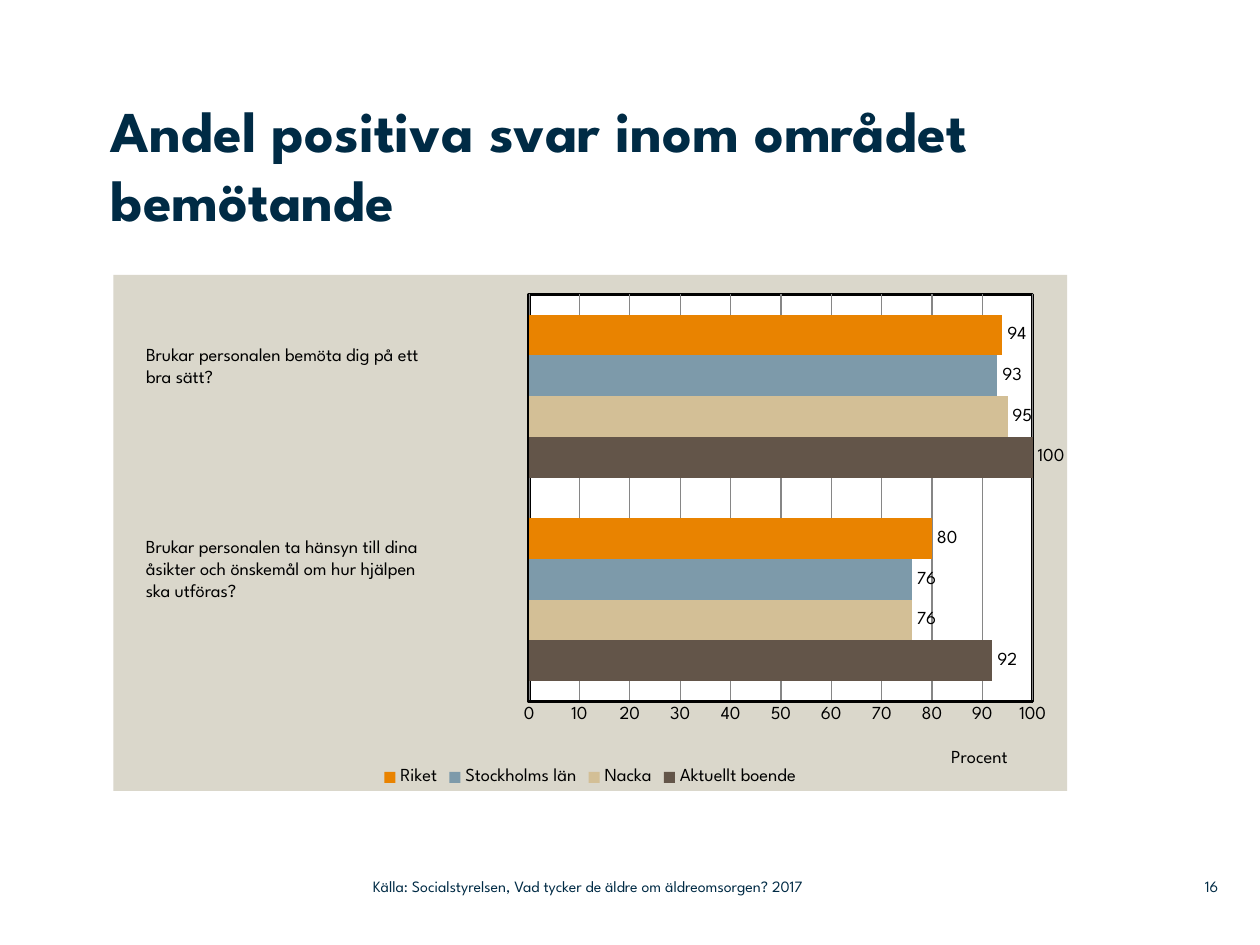
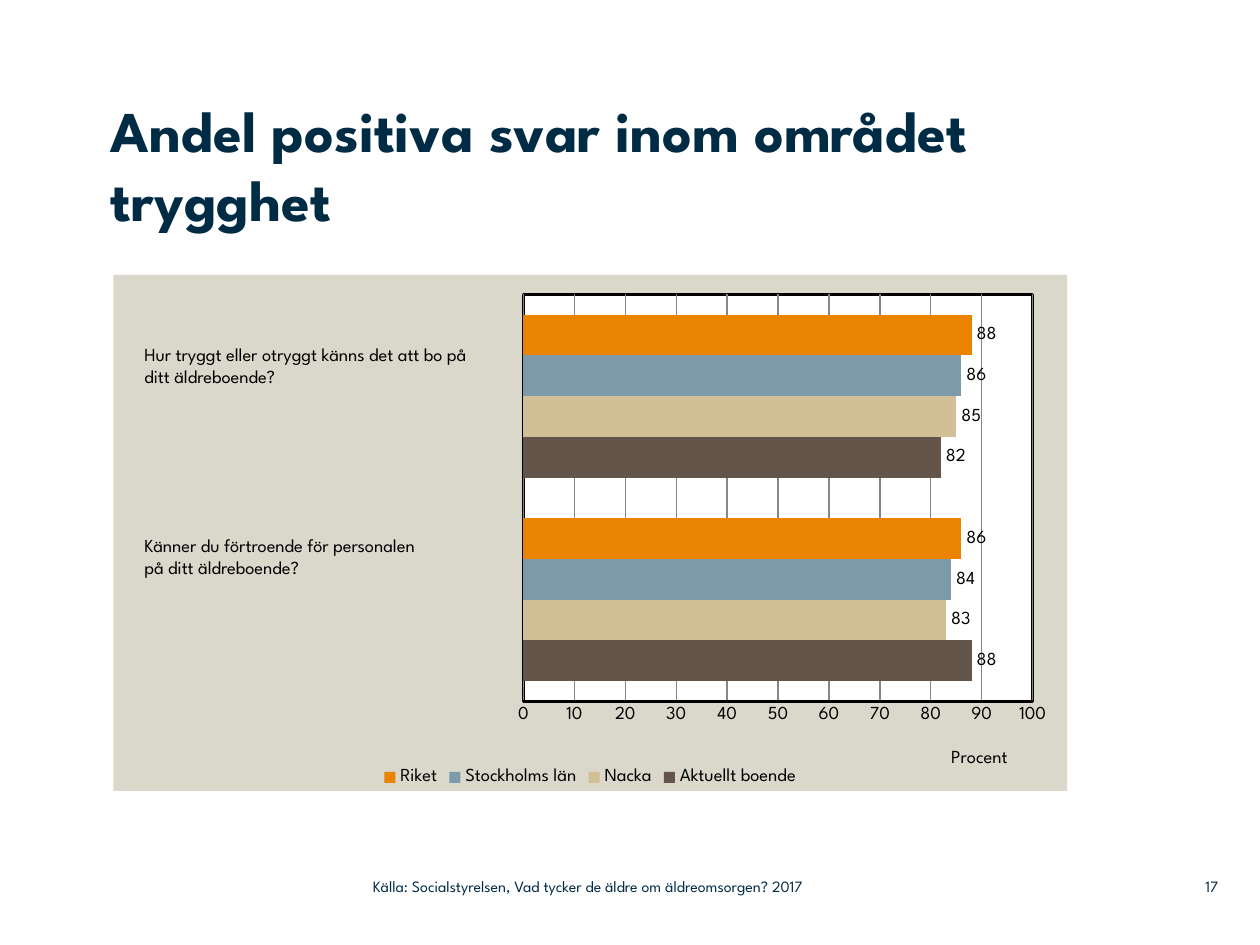
from dataclasses import dataclass

from pptx import Presentation
from pptx.chart.data import CategoryChartData
from pptx.dml.color import RGBColor
from pptx.enum.chart import XL_CHART_TYPE, XL_LABEL_POSITION, XL_LEGEND_POSITION, XL_TICK_MARK
from pptx.enum.text import MSO_ANCHOR, MSO_AUTO_SIZE, PP_ALIGN
from pptx.oxml import parse_xml
from pptx.oxml.ns import nsdecls, qn
from pptx.util import Pt

FONT = "League Spartan"
NAVY = RGBColor(0x00, 0x2B, 0x45)
BLACK = RGBColor(0x00, 0x00, 0x00)
WHITE = RGBColor(0xFF, 0xFF, 0xFF)
GRID_GRAY = RGBColor(0x86, 0x86, 0x86)
PANEL_BEIGE = RGBColor(0xDA, 0xD7, 0xCB)
BROWN = RGBColor(0x63, 0x55, 0x49)
SAND = RGBColor(0xD3, 0xBF, 0x96)
BLUE_GRAY = RGBColor(0x7D, 0x9A, 0xAA)
ORANGE = RGBColor(0xE9, 0x83, 0x00)

SERIES_COLORS = {
    "Aktuellt boende": BROWN,
    "Nacka": SAND,
    "Stockholms län": BLUE_GRAY,
    "Riket": ORANGE,
}
SOURCE = "Källa: Socialstyrelsen, Vad tycker de äldre om äldreomsorgen? 2017"
CHART_SIZE = 10.5
FOOTER_SIZE = 9
FOOTER_TOP = 496
FOOTER_HEIGHT = 21


@dataclass(frozen=True)
class Box:
    left: float
    top: float
    width: float
    height: float


@dataclass(frozen=True)
class Question:
    text: str
    box: Box


@dataclass(frozen=True)
class SurveySlide:
    number: int
    title: str
    plot_left: float
    questions: tuple[Question, ...]
    values: tuple[tuple[int, int], ...]


SURVEY_SLIDES = (
    SurveySlide(
        16,
        "Andel positiva svar inom området bemötande",
        0.436,
        (
            Question("Brukar personalen bemöta dig på ett\nbra sätt?", Box(76.4, 192.4, 214, 32.5)),
            Question(
                "Brukar personalen ta hänsyn till dina\nåsikter och önskemål om hur hjälpen\nska utföras?",
                Box(76.3, 302.2, 215, 45),
            ),
        ),
        ((92, 100), (76, 95), (76, 93), (80, 94)),
    ),
    SurveySlide(
        17,
        "Andel positiva svar inom området trygghet",
        0.43,
        (
            Question(
                "Hur tryggt eller otryggt känns det att bo på ditt äldreboende?",
                Box(75.4, 192.6, 212, 32.5),
            ),
            Question(
                "Känner du förtroende för personalen\npå ditt äldreboende?",
                Box(75.4, 301.7, 211, 32.5),
            ),
        ),
        ((88, 82), (83, 85), (84, 86), (86, 88)),
    ),
)


def place(shape, box: Box) -> None:
    shape.left, shape.top = Pt(box.left), Pt(box.top)
    shape.width, shape.height = Pt(box.width), Pt(box.height)


def format_font(font, size: float, color: RGBColor, bold: bool = False) -> None:
    font.name = FONT
    font.size = Pt(size)
    font.bold = bold
    font.color.rgb = color


def write_text(
    shape,
    text: str,
    *,
    size: float,
    color: RGBColor,
    bold: bool = False,
    align: PP_ALIGN = PP_ALIGN.LEFT,
    anchor: MSO_ANCHOR = MSO_ANCHOR.TOP,
    margins: bool = False,
    grow: bool = False,
) -> None:
    frame = shape.text_frame
    frame.text = text
    frame.word_wrap = True
    frame.auto_size = MSO_AUTO_SIZE.SHAPE_TO_FIT_TEXT if grow else MSO_AUTO_SIZE.NONE
    frame.vertical_anchor = anchor
    if not margins:
        frame.margin_left = frame.margin_right = frame.margin_top = frame.margin_bottom = 0
    for paragraph in frame.paragraphs:
        paragraph.alignment = align
        for run in paragraph.runs:
            format_font(run.font, size, color, bold)


def add_text(slide, box: Box, text: str, **text_format) -> None:
    shape = slide.shapes.add_textbox(Pt(box.left), Pt(box.top), Pt(box.width), Pt(box.height))
    write_text(shape, text, **text_format)


def area_format(fill: RGBColor, line: RGBColor | None = None):
    outline = "<a:ln><a:noFill/></a:ln>"
    if line is not None:
        outline = f'<a:ln w="{Pt(2)}"><a:solidFill><a:srgbClr val="{line}"/></a:solidFill></a:ln>'
    return parse_xml(
        f'<c:spPr {nsdecls("c", "a")}><a:solidFill><a:srgbClr val="{fill}"/></a:solidFill>{outline}</c:spPr>'
    )


def set_layout(element, index: int, target: str = "", **fractions: float) -> None:
    for existing in element.findall(qn("c:layout")):
        element.remove(existing)
    target_tag = f'<c:layoutTarget val="{target}"/>' if target else ""
    modes = '<c:xMode val="edge"/><c:yMode val="edge"/>'
    values = "".join(f'<c:{name} val="{value}"/>' for name, value in fractions.items())
    layout = parse_xml(
        f'<c:layout {nsdecls("c")}><c:manualLayout>{target_tag}{modes}{values}</c:manualLayout></c:layout>'
    )
    element.insert(index, layout)


def format_value_axis(axis) -> None:
    axis.minimum_scale = 0
    axis.maximum_scale = 100
    axis.major_unit = 10
    axis.major_tick_mark = axis.minor_tick_mark = XL_TICK_MARK.NONE
    axis.format.line.color.rgb = BLACK
    axis.format.line.width = Pt(2)
    axis.major_gridlines.format.line.color.rgb = GRID_GRAY
    axis.major_gridlines.format.line.width = Pt(0.75)
    format_font(axis.tick_labels.font, CHART_SIZE, BLACK)
    title = axis.axis_title
    title.text_frame.text = "Procent"
    format_font(title.text_frame.paragraphs[0].runs[0].font, CHART_SIZE, BLACK)
    set_layout(title._element, 1, x=0.875, y=0.91)


def add_survey_chart(slide, survey: SurveySlide) -> None:
    data = CategoryChartData()
    data.categories = ["1", "2"]
    for name, values in zip(SERIES_COLORS, survey.values):
        data.add_series(name, values)
    chart = slide.shapes.add_chart(
        XL_CHART_TYPE.BAR_CLUSTERED, Pt(64.8), Pt(157), Pt(545), Pt(295), data
    ).chart
    chart.has_title = False
    format_font(chart.font, CHART_SIZE, BLACK)
    chart.has_legend = True
    chart.legend.position = XL_LEGEND_POSITION.BOTTOM
    chart.legend.include_in_layout = False
    format_font(chart.legend.font, CHART_SIZE, BLACK)
    chart.category_axis.visible = False
    format_value_axis(chart.value_axis)

    plot = chart.plots[0]
    plot.gap_width = 100
    plot.overlap = 0
    plot.vary_by_categories = False
    for series, color in zip(plot.series, SERIES_COLORS.values()):
        series.format.fill.solid()
        series.format.fill.fore_color.rgb = color
        labels = series.data_labels
        labels.show_value = True
        labels.position = XL_LABEL_POSITION.OUTSIDE_END
        format_font(labels.font, CHART_SIZE, BLACK)

    chart_element = chart._chartSpace.find(qn("c:chart"))
    chart_element.addnext(area_format(PANEL_BEIGE))
    plot_area = chart_element.find(qn("c:plotArea"))
    plot_area.append(area_format(WHITE, BLACK))
    right_edge = 0.964
    set_layout(
        plot_area, 0, "inner",
        x=survey.plot_left, y=0.038, w=round(right_edge - survey.plot_left, 3), h=0.789,
    )


def add_survey_slide(presentation, survey: SurveySlide) -> None:
    slide = presentation.slides.add_slide(presentation.slide_layouts.get_by_name("Title Only"))
    add_survey_chart(slide, survey)
    title = slide.shapes.title
    place(title, Box(63.4, 54, 547, 102))
    write_text(title, survey.title, size=33, color=NAVY, bold=True)
    for question in survey.questions:
        add_text(
            slide, question.box, question.text, size=CHART_SIZE, color=BLACK, margins=True, grow=True
        )
    footer_format = {"size": FOOTER_SIZE, "color": NAVY, "anchor": MSO_ANCHOR.MIDDLE}
    add_text(
        slide, Box(662.4, FOOTER_TOP, 33.8, FOOTER_HEIGHT), str(survey.number),
        align=PP_ALIGN.RIGHT, **footer_format,
    )
    add_text(slide, Box(213.1, FOOTER_TOP, 319, FOOTER_HEIGHT), SOURCE, **footer_format)


def main() -> None:
    presentation = Presentation()
    presentation.slide_width = Pt(720)
    presentation.slide_height = Pt(540)
    for survey in SURVEY_SLIDES:
        add_survey_slide(presentation, survey)
    presentation.save("out.pptx")


if __name__ == "__main__":
    main()
